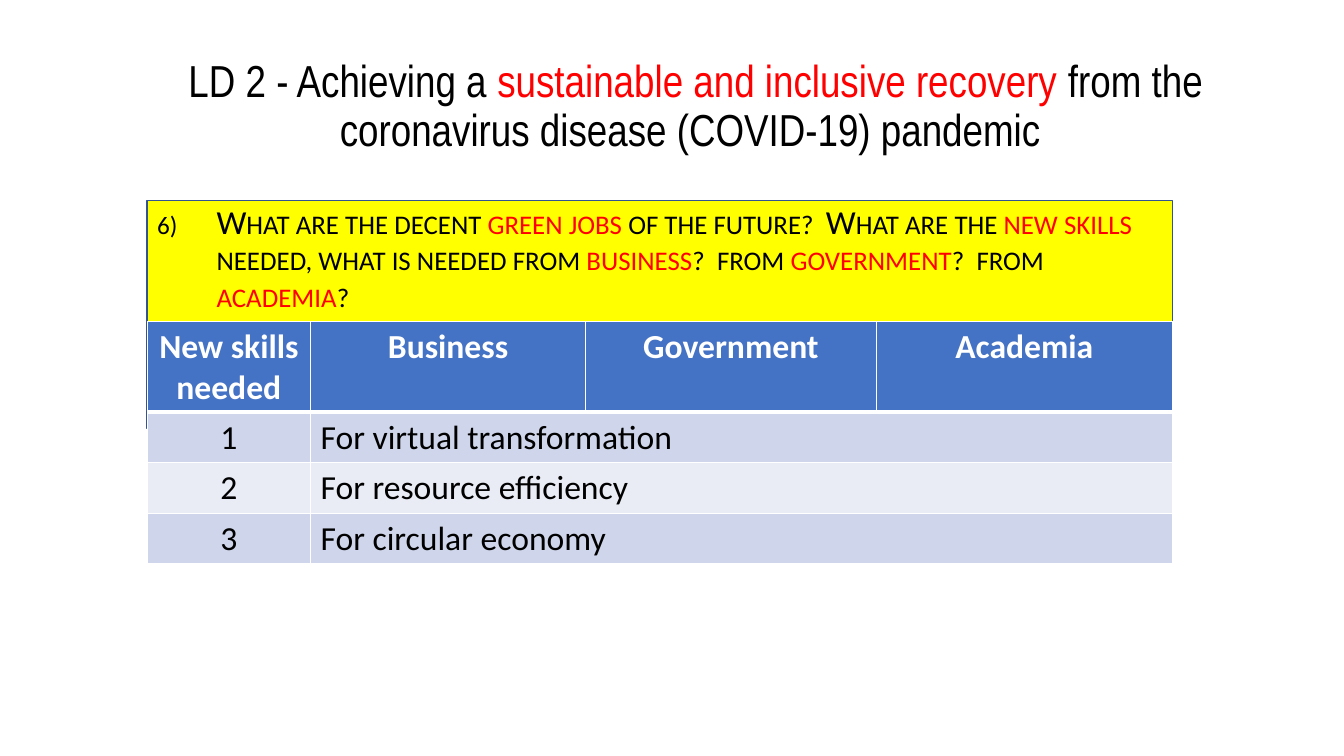
from lxml.etree import SubElement
from pptx import Presentation
from pptx.dml.color import RGBColor
from pptx.enum.shapes import MSO_SHAPE
from pptx.enum.text import MSO_ANCHOR, PP_ALIGN
from pptx.oxml import parse_xml
from pptx.oxml.ns import nsdecls, qn
from pptx.util import Inches, Pt

COLORS = {
    "black": "000000", "red": "FF0000", "white": "FFFFFF", "yellow": "FFFF00",
    "outline": "325491", "header": "4472C4", "odd": "CFD5EA", "even": "E9EBF5",
}
LEFT, TOP, WIDTH = 1.46, 1.99, 10.17
TITLE = [
    ("LD 2 - Achieving a ", "black"),
    ("sustainable and inclusive recovery ", "red"),
    ("from the coronavirus disease (COVID-19) pandemic ", "black"),
]
QUESTION = [
    ("What are the decent ", "black"), ("green jobs ", "red"),
    ("of the future?  What are the ", "black"), ("new skills ", "red"),
    ("needed, what is needed from ", "black"), ("business", "red"),
    ("?  from ", "black"), ("government", "red"),
    ("?  from ", "black"), ("academia", "red"), ("?", "black"),
]
HEADERS = ["New skills needed", "Business", "Government", "Academia"]
SKILLS = ["For virtual transformation", "For resource efficiency", "For circular economy"]
COLUMN_WIDTHS = [1.62, 2.73, 2.88, 2.94]
ROW_HEIGHTS = [0.9, 0.5, 0.5, 0.5]


def color(name):
    return RGBColor.from_string(COLORS[name])


def add_run(paragraph, text, color_name, size=24, font="Calibri", bold=False):
    run = paragraph.add_run()
    run.text = text
    run.font.name = font
    run.font.size = Pt(size)
    run.font.bold = bold
    run.font.color.rgb = color(color_name)
    return run


def add_text_box(slide, left, top, width, height, anchor):
    """Add a wrapping text box and return its first paragraph."""
    box = slide.shapes.add_textbox(Inches(left), Inches(top), Inches(width), Inches(height))
    box.text_frame.word_wrap = True
    box.text_frame.vertical_anchor = anchor
    paragraph = box.text_frame.paragraphs[0]
    paragraph.line_spacing = 0.9
    return paragraph


def add_title(slide):
    paragraph = add_text_box(slide, 1.55, 0.34, 10.7, 1.45, MSO_ANCHOR.MIDDLE)
    paragraph.alignment = PP_ALIGN.CENTER
    for text, color_name in TITLE:
        add_run(paragraph, text, color_name, size=32, font="Arial Narrow")


def add_panel(slide):
    panel = slide.shapes.add_shape(
        MSO_SHAPE.RECTANGLE, Inches(LEFT), Inches(TOP), Inches(WIDTH), Inches(2.26))
    panel.shadow.inherit = False
    panel.fill.solid()
    panel.fill.fore_color.rgb = color("yellow")
    panel.line.color.rgb = color("outline")
    panel.line.width = Pt(1)


def number_paragraph(paragraph, start, indent):
    properties = paragraph._p.get_or_add_pPr()
    properties.set("marL", str(Inches(indent)))
    properties.set("indent", str(-Inches(indent)))
    SubElement(properties, qn("a:buSzPct"), val="75000")
    SubElement(properties, qn("a:buFont"), typeface="+mj-lt")
    SubElement(properties, qn("a:buAutoNum"), type="arabicParenR", startAt=str(start))


def add_question(slide):
    paragraph = add_text_box(slide, LEFT, TOP, WIDTH, 5.33, MSO_ANCHOR.TOP)
    paragraph.space_before = Pt(10)
    number_paragraph(paragraph, start=6, indent=0.59)
    for text, color_name in QUESTION:
        run = add_run(paragraph, text, color_name)
        run.font._element.set("cap", "small")


def set_borders(cell, bottom_width):
    properties = cell._tc.get_or_add_tcPr()
    widths = {"lnL": 1, "lnR": 1, "lnT": 1, "lnB": bottom_width}
    for index, (tag, width) in enumerate(widths.items()):
        properties.insert(index, parse_xml(
            f'<a:{tag} {nsdecls("a")} w="{Pt(width)}"><a:solidFill>'
            f'<a:srgbClr val="{COLORS["white"]}"/></a:solidFill></a:{tag}>'))


def fill_cell(cell, text, fill_name, is_header, centered):
    cell.fill.solid()
    cell.fill.fore_color.rgb = color(fill_name)
    set_borders(cell, 3 if is_header else 1)
    if text:
        paragraph = cell.text_frame.paragraphs[0]
        paragraph.alignment = PP_ALIGN.CENTER if centered else PP_ALIGN.LEFT
        add_run(paragraph, text, "white" if is_header else "black", bold=is_header)


def add_skills_table(slide):
    rows = [HEADERS] + [[str(number), skill, "", ""]
                        for number, skill in enumerate(SKILLS, start=1)]
    table = slide.shapes.add_table(
        len(rows), len(HEADERS), Inches(LEFT), Inches(3.19),
        Inches(WIDTH), Inches(sum(ROW_HEIGHTS))).table
    for column, width in zip(table.columns, COLUMN_WIDTHS):
        column.width = Inches(width)
    for row_index, texts in enumerate(rows):
        table.rows[row_index].height = Inches(ROW_HEIGHTS[row_index])
        is_header = row_index == 0
        fill_name = "header" if is_header else ("even", "odd")[row_index % 2]
        for column_index, text in enumerate(texts):
            fill_cell(table.cell(row_index, column_index), text, fill_name,
                      is_header, centered=is_header or column_index == 0)
        # Each skill spans the three sector columns
        if not is_header:
            table.cell(row_index, 1).merge(table.cell(row_index, 3))


def main():
    presentation = Presentation()
    presentation.slide_width = Inches(13.33)
    presentation.slide_height = Inches(7.5)
    slide = presentation.slides.add_slide(presentation.slide_layouts[6])
    # Question on its yellow panel
    add_panel(slide)
    add_question(slide)
    # Heading and table
    add_title(slide)
    add_skills_table(slide)
    presentation.save("out.pptx")


if __name__ == "__main__":
    main()
